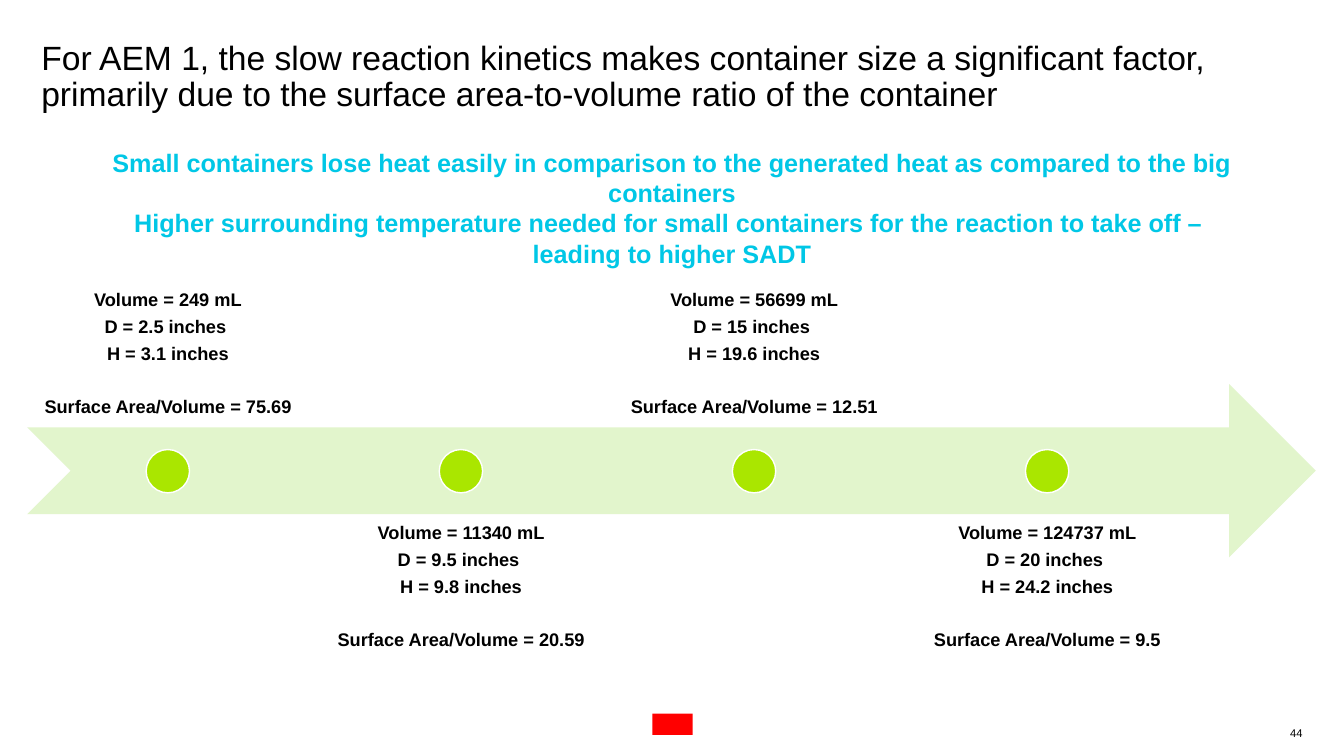
from dataclasses import dataclass

from pptx import Presentation
from pptx.dml.color import RGBColor
from pptx.enum.shapes import MSO_SHAPE
from pptx.enum.text import MSO_ANCHOR, MSO_AUTO_SIZE, PP_ALIGN
from pptx.shapes.autoshape import Shape
from pptx.slide import Slide
from pptx.util import Inches, Pt

BLACK = RGBColor(0x00, 0x00, 0x00)
WHITE = RGBColor(0xFF, 0xFF, 0xFF)
RED = RGBColor(0xFF, 0x00, 0x00)
CYAN = RGBColor(0x00, 0xC7, 0xE6)
LIME = RGBColor(0xAA, 0xE6, 0x00)
PALE_GREEN = RGBColor(0xE2, 0xF5, 0xCC)

TITLE = (
    "For AEM 1, the slow reaction kinetics makes container size a significant factor, "
    "primarily due to the surface area-to-volume ratio of the container"
)
MESSAGE = (
    "Small containers lose heat easily in comparison to the generated heat "
    "as compared to the big containers\n"
    "Higher surrounding temperature needed for small containers for the reaction "
    "to take off – \vleading to higher SADT"
)

FIRST_LEFT, PITCH = 0.28, 2.907
LABEL_WIDTH, LABEL_HEIGHT = 2.77, 1.72
ABOVE_TOP, BELOW_TOP = 2.52, 5.1
DOT_TOP, DOT_SIZE = 4.46, 0.43


@dataclass(frozen=True)
class Container:
    volume: str
    diameter: str
    height: str
    ratio: str

    def text(self) -> str:
        return (
            f"Volume = {self.volume} mL\n"
            f"D = {self.diameter} inches \n"
            f"H = {self.height} inches\n"
            f"Surface Area/Volume = {self.ratio}"
        )


CONTAINERS = (
    Container("249", "2.5", "3.1", "75.69"),
    Container("11340", "9.5", "9.8", "20.59"),
    Container("56699", "15", "19.6", "12.51"),
    Container("124737", "20", "24.2", "9.5"),
)


def write(
    box: Shape,
    text: str,
    size: float,
    color: RGBColor = BLACK,
    bold: bool = False,
    align: PP_ALIGN = PP_ALIGN.CENTER,
    anchor: MSO_ANCHOR = MSO_ANCHOR.TOP,
    margin: float = 0,
    line_spacing: float = 1.0,
) -> None:
    """Fill a box with text in one uniform format."""
    frame = box.text_frame
    frame.text = text
    frame.word_wrap = True
    frame.auto_size = MSO_AUTO_SIZE.NONE
    frame.vertical_anchor = anchor
    frame.margin_left = frame.margin_right = Inches(margin)
    frame.margin_top = frame.margin_bottom = Inches(margin)
    for para in frame.paragraphs:
        para.alignment = align
        para.line_spacing = line_spacing
        for span in para.runs:
            span.font.name = "Arial"
            span.font.size = Pt(size)
            span.font.bold = bold
            span.font.color.rgb = color


def add_text_box(slide: Slide, left: float, top: float, width: float, height: float) -> Shape:
    return slide.shapes.add_textbox(Inches(left), Inches(top), Inches(width), Inches(height))


def add_filled_shape(
    slide: Slide, kind: MSO_SHAPE, left: float, top: float,
    width: float, height: float, color: RGBColor,
) -> Shape:
    shape = slide.shapes.add_shape(
        kind, Inches(left), Inches(top), Inches(width), Inches(height)
    )
    shape.shadow.inherit = False
    shape.fill.solid()
    shape.fill.fore_color.rgb = color
    shape.line.fill.background()
    return shape


def add_container(slide: Slide, index: int, container: Container) -> None:
    """Place a dot on the arrow, with its label above or below in turn."""
    left = FIRST_LEFT + index * PITCH
    above = index % 2 == 0
    label = add_text_box(
        slide, left, ABOVE_TOP if above else BELOW_TOP, LABEL_WIDTH, LABEL_HEIGHT
    )
    write(
        label, container.text(), 13, bold=True, margin=0.1, line_spacing=0.9,
        anchor=MSO_ANCHOR.BOTTOM if above else MSO_ANCHOR.TOP,
    )
    *dimensions, ratio = label.text_frame.paragraphs
    for para in dimensions:
        para.space_after = Pt(5.2)
    ratio.space_before = Pt(18.7)

    dot_left = left + (LABEL_WIDTH - DOT_SIZE) / 2
    dot = add_filled_shape(
        slide, MSO_SHAPE.OVAL, dot_left, DOT_TOP, DOT_SIZE, DOT_SIZE, LIME
    )
    dot.line.color.rgb = WHITE
    dot.line.width = Pt(1)


def main() -> None:
    deck = Presentation()
    deck.slide_width, deck.slide_height = Inches(13.33), Inches(7.5)
    slide = deck.slides.add_slide(deck.slide_layouts[5])

    title = slide.shapes.title
    title.left, title.top = Inches(0.41), Inches(0.41)
    title.width, title.height = Inches(12.49), Inches(0.9)
    write(title, TITLE, 24, align=PP_ALIGN.LEFT, line_spacing=0.9)

    add_filled_shape(slide, MSO_SHAPE.RECTANGLE, 6.47, 7.08, 0.4, 0.21, RED)
    page_number = add_text_box(slide, 12.68, 7.21, 0.24, 0.13)
    write(page_number, "44", 8, align=PP_ALIGN.RIGHT)

    add_filled_shape(
        slide, MSO_SHAPE.NOTCHED_RIGHT_ARROW, 0.27, 3.81, 12.78, 1.72, PALE_GREEN
    )
    for index, container in enumerate(CONTAINERS):
        add_container(slide, index, container)

    message = add_text_box(slide, 0.58, 1.46, 12.17, 1.21)
    write(message, MESSAGE, 18, color=CYAN, bold=True)

    deck.save("out.pptx")


if __name__ == "__main__":
    main()
